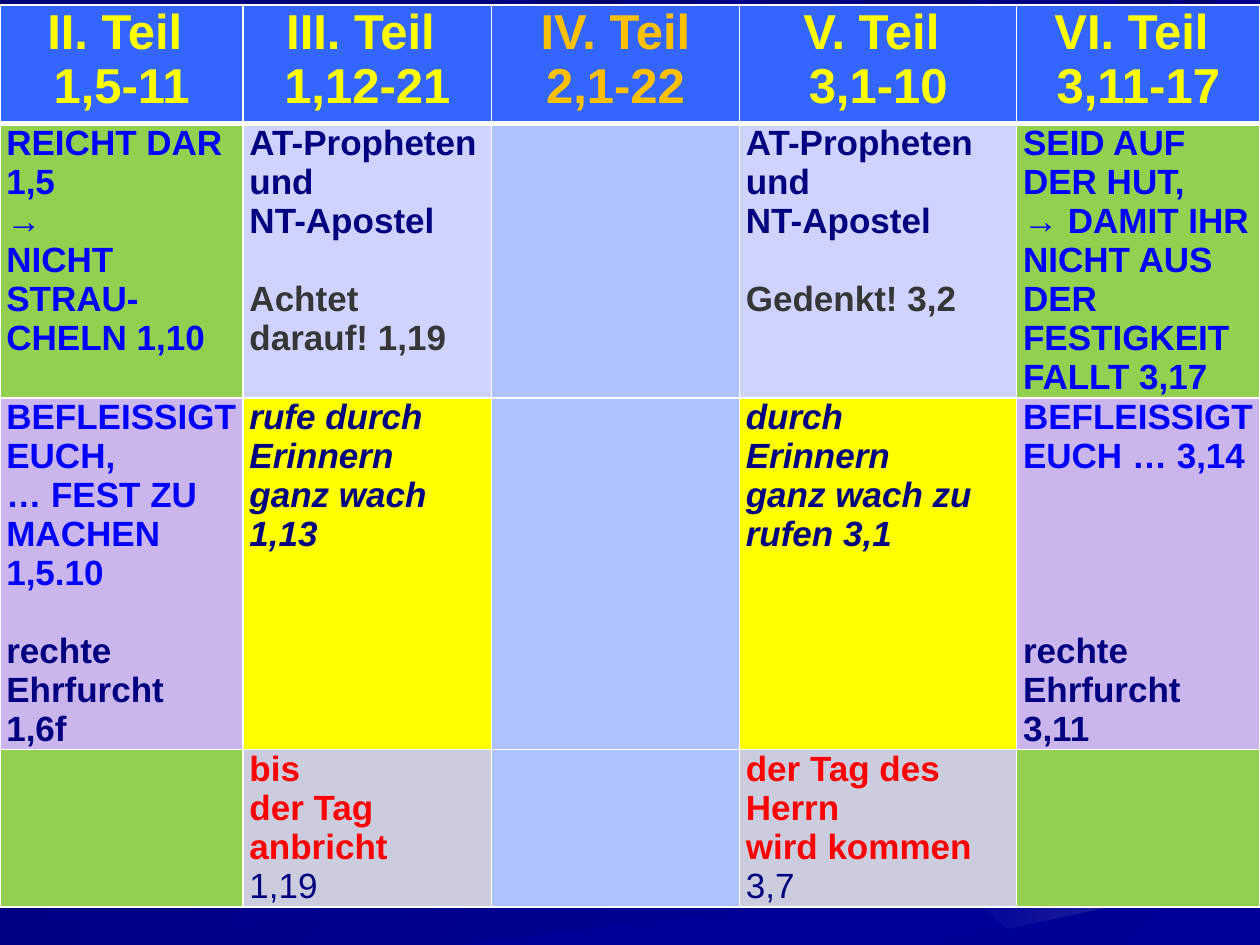
from dataclasses import dataclass

from lxml.etree import SubElement
from pptx import Presentation
from pptx.dml.color import RGBColor
from pptx.dml.fill import FillFormat
from pptx.enum.text import PP_ALIGN
from pptx.oxml.ns import qn
from pptx.slide import Slide
from pptx.table import _Cell
from pptx.util import Inches, Pt

COLORS = {
    "header": "3366FF", "green": "92D050", "lavender": "CED3FF", "sky": "ADC2FF",
    "violet": "CAB5EC", "yellow": "FFFF00", "grey": "CCCCDF", "white": "FFFFFF",
    "orange": "FFC000", "blue": "0000FF", "navy": "000080", "dark": "363636",
    "red": "FF0000", "night": "000078", "deep": "000099", "ray": "000085",
    "dusk": "39399E", "ink": "00006D", "shade": "000073", "dim": "00007B",
    "bright": "00008E",
}
FONT = "Arial"
BODY_LINE = 22.2
COLUMN_WIDTHS = (1.93, 1.97, 1.97, 2.2, 1.93)
ROW_HEIGHTS = (0.94, 2.18, 2.78, 1.25)


@dataclass(frozen=True)
class Span:
    text: str
    color: str
    bold: bool = True
    italic: bool = False


@dataclass(frozen=True)
class Line:
    spans: tuple[Span, ...]
    lines_before: int = 0


@dataclass(frozen=True)
class CellContent:
    fill: str
    lines: tuple[Line, ...] = ()


@dataclass(frozen=True)
class Ray:
    points: tuple[tuple[float, float], ...]
    start: str
    end: str
    angle: int = 0


def lines(color: str, *texts: str, lines_before: int = 0, bold: bool = True,
          italic: bool = False) -> tuple[Line, ...]:
    """Make one line per text; the gap goes above the first of them."""
    return tuple(Line((Span(text, color, bold, italic),), 0 if index else lines_before)
                 for index, text in enumerate(texts))


def header(color: str, *texts: str) -> CellContent:
    return CellContent("header", lines(color, *texts))


def witnesses(appeal: str) -> CellContent:
    return CellContent("lavender", lines("navy", "AT-Propheten und", "NT-Apostel")
                       + lines("dark", appeal, lines_before=1))


def reminder(*texts: str) -> CellContent:
    return CellContent("yellow", lines("navy", *texts, italic=True))


RAYS = (
    Ray(((5.56, 3.17), (0, 0.02), (0, 0.93), (5.29, 3.45), (10, 5.7)), "ink", "navy"),
    Ray(((5.77, 2.98), (1.01, 0), (0.26, 0), (5.63, 3.1), (10, 5.63)), "dim", "deep", 45),
    Ray(((0, 7.5), (0.54, 7.5), (6.28, 6.97), (6.28, 6.89), (0, 7.35)), "ray", "deep"),
    Ray(((7.42, 7.5), (8.01, 7.37), (7.56, 7.02), (3.64, 7.5)), "deep", "deep"),
    Ray(((10, 6.94), (10, 6.72), (7.56, 7.02), (8, 7.37)), "deep", "dusk"),
    Ray(((3.98, 0), (9.44, 4.73), (9.47, 4.69), (4.16, 0)), "ray", "deep", 45),
    Ray(((4.26, 0), (9.51, 4.65), (9.68, 4.49), (4.92, 0)), "ink", "deep", 45),
    Ray(((5.4, 0), (9.77, 4.4), (5.52, 0)), "shade", "deep", 45),
    Ray(((6.06, 0), (9.85, 4.31), (9.87, 4.3), (6.61, 0)), "shade", "navy", 90),
    Ray(((8.87, 0), (9.73, 1.81), (9.86, 1.48), (9.3, 0)), "ink", "navy", 90),
    Ray(((9.64, 0), (9.39, 0), (9.89, 1.38), (9.99, 1.13)), "ink", "navy", 90),
    Ray(((2.25, 0), (9.99, 5.52), (9.99, 5.47), (2.47, 0)), "shade", "deep", 45),
    Ray(((5.77, 0), (9.99, 4.54), (9.99, 4.53), (5.88, 0)), "bright", "deep", 45),
    Ray(((7.7, 0), (6.86, 0), (9.99, 4.28), (9.99, 3.9)), "shade", "navy", 90),
    Ray(((7.85, 0), (9.99, 3.6), (9.99, 3.54), (7.92, 0)), "night", "deep", 45),
    Ray(((8.15, 0), (9.99, 3.36), (9.99, 3.35), (8.24, 0)), "ray", "deep", 45),
    Ray(((9.99, 2.49), (8.72, 0), (8.65, 0), (9.99, 2.58)), "ray", "deep", 45),
)

EMPTY = CellContent("sky")
ROWS = (
    (
        header("yellow", "II. Teil ", "1,5-11"),
        header("yellow", "III. Teil ", "1,12-21"),
        header("orange", "IV. Teil 2,1-22"),
        header("yellow", "V. Teil ", "3,1-10"),
        header("yellow", "VI. Teil ", "3,11-17"),
    ),
    (
        CellContent("green", lines("blue", "REICHT DAR 1,5", "→", "NICHT STRAU-CHELN 1,10")),
        witnesses("Achtet darauf! 1,19"),
        EMPTY,
        witnesses("Gedenkt! 3,2"),
        CellContent("green", lines("blue", "SEID AUF DER HUT,",
                                   "→ DAMIT IHR NICHT AUS DER FESTIGKEIT FALLT 3,17")),
    ),
    (
        CellContent("violet", lines("blue", "BEFLEISSIGT EUCH,", "… FEST ZU MACHEN 1,5.10")
                    + lines("navy", "rechte Ehrfurcht", "1,6f", lines_before=1)),
        reminder("rufe durch Erinnern", "ganz wach 1,13"),
        EMPTY,
        reminder("durch", "Erinnern", "ganz wach zu rufen 3,1"),
        CellContent("violet", lines("blue", "BEFLEISSIGT EUCH … 3,14")
                    + lines("navy", "rechte", "Ehrfurcht 3,11", lines_before=4)),
    ),
    (
        CellContent("green"),
        CellContent("grey", lines("red", "bis", "der Tag anbricht")
                    + lines("navy", "1,19", bold=False)),
        EMPTY,
        CellContent("grey", lines("red", "der Tag des Herrn") + (
            Line((Span("wird kommen", "red"), Span(" 3,7", "navy", bold=False))),)),
        CellContent("green"),
    ),
)


def rgb(name: str) -> RGBColor:
    return RGBColor.from_string(COLORS[name])


def fill_gradient(fill: FillFormat, start: str, end: str, clockwise: int) -> None:
    fill.gradient()
    fill.gradient_angle = -clockwise % 360
    for stop, name in zip(fill.gradient_stops, (start, end)):
        stop.color.rgb = rgb(name)


def draw_ray(slide: Slide, ray: Ray) -> None:
    first, *others = [(Inches(x), Inches(y)) for x, y in ray.points]
    builder = slide.shapes.build_freeform(*first)
    builder.add_line_segments(others, close=True)
    shape = builder.convert_to_shape()
    shape.shadow.inherit = False
    shape.line.fill.background()
    fill_gradient(shape.fill, ray.start, ray.end, ray.angle)


def set_borders(cell: _Cell, top: float, bottom: float) -> None:
    """Draw white borders; widths are in points, the sides being 1 point."""
    properties = cell._tc.get_or_add_tcPr()
    for tag, width in (("lnL", 1), ("lnR", 1), ("lnT", top), ("lnB", bottom)):
        border = SubElement(properties, qn(f"a:{tag}"), w=str(Pt(width)))
        solid = SubElement(border, qn("a:solidFill"))
        SubElement(solid, qn("a:srgbClr"), val=COLORS["white"])


def write_cell(cell: _Cell, content: CellContent, is_header: bool) -> None:
    cell.margin_left = cell.margin_right = Inches(0.05)
    cell.margin_top = cell.margin_bottom = 0
    cell.fill.solid()
    cell.fill.fore_color.rgb = rgb(content.fill)
    frame = cell.text_frame
    for index, line in enumerate(content.lines):
        paragraph = frame.add_paragraph() if index else frame.paragraphs[0]
        paragraph.alignment = PP_ALIGN.CENTER if is_header else PP_ALIGN.LEFT
        if line.lines_before:
            paragraph.space_before = Pt(BODY_LINE * line.lines_before)
        for span in line.spans:
            run = paragraph.add_run()
            run.text = span.text
            run.font.name = FONT
            run.font.size = Pt(28 if is_header else 20)
            run.font.bold, run.font.italic = span.bold, span.italic
            run.font.color.rgb = rgb(span.color)


def draw_table(slide: Slide) -> None:
    table = slide.shapes.add_table(
        len(ROW_HEIGHTS), len(COLUMN_WIDTHS), 0, Inches(0.04),
        Inches(sum(COLUMN_WIDTHS)), Inches(sum(ROW_HEIGHTS))).table
    for column, width in zip(table.columns, COLUMN_WIDTHS):
        column.width = Inches(width)
    for row_index, (row, height) in enumerate(zip(table.rows, ROW_HEIGHTS)):
        row.height = Inches(height)
        for cell, content in zip(row.cells, ROWS[row_index]):
            set_borders(cell, 3 if row_index == 1 else 1, 3 if row_index == 0 else 1)
            write_cell(cell, content, row_index == 0)


def main() -> None:
    presentation = Presentation()
    presentation.slide_width, presentation.slide_height = Inches(10), Inches(7.5)
    slide = presentation.slides.add_slide(presentation.slide_layouts[6])
    fill_gradient(slide.background.fill, "night", "deep", 45)
    for ray in RAYS:
        draw_ray(slide, ray)
    draw_table(slide)
    presentation.save("out.pptx")


if __name__ == "__main__":
    main()
